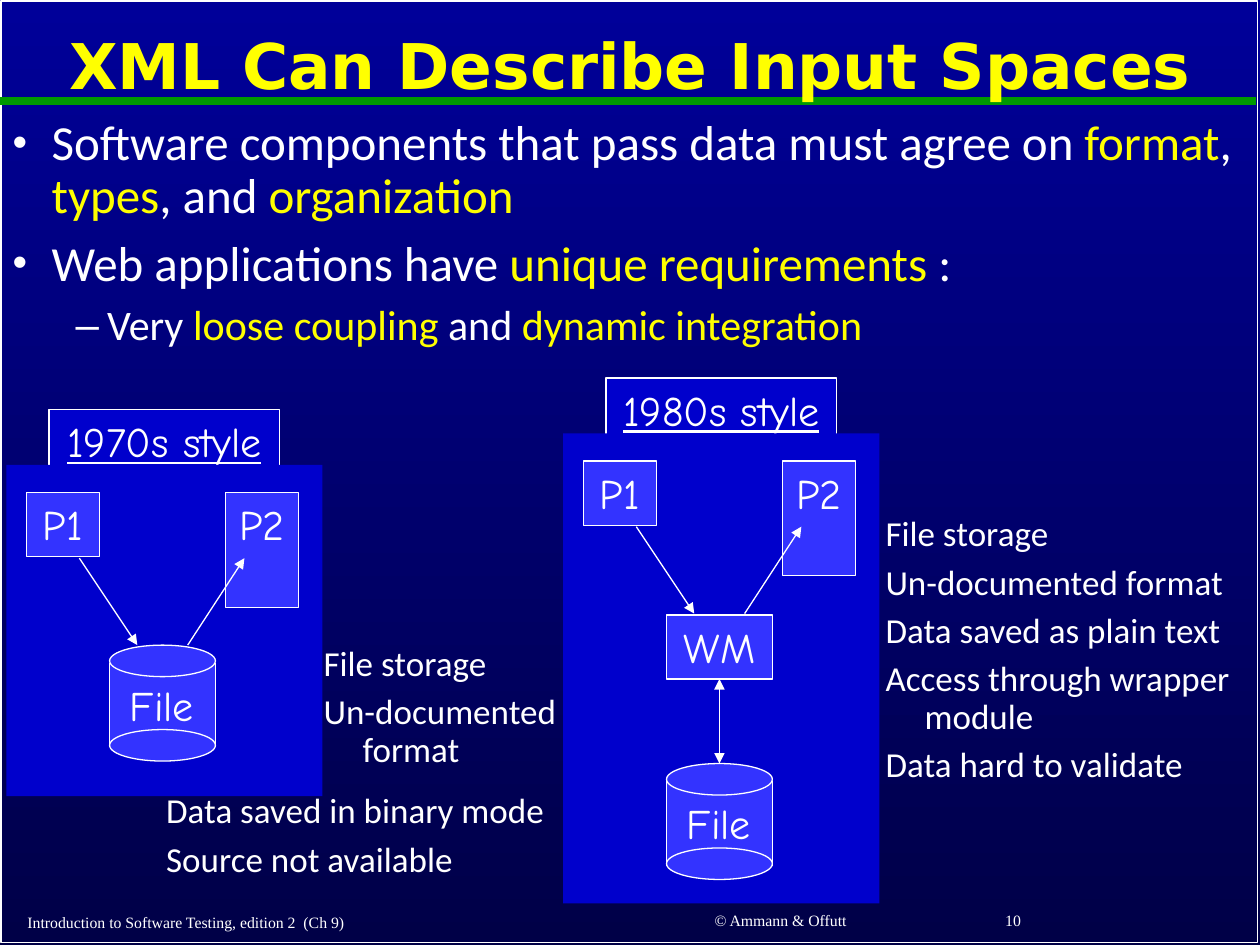
from dataclasses import dataclass

from lxml import etree
from pptx import Presentation
from pptx.dml.color import RGBColor
from pptx.enum.shapes import MSO_CONNECTOR, MSO_SHAPE
from pptx.enum.text import MSO_ANCHOR, MSO_AUTO_SIZE, PP_ALIGN
from pptx.oxml.ns import qn
from pptx.util import Pt

EMU_PER_PX = 9144
RECTANGLE, OVAL = MSO_SHAPE.RECTANGLE, MSO_SHAPE.OVAL
STRAIGHT = MSO_CONNECTOR.STRAIGHT
LEFT, CENTER = PP_ALIGN.LEFT, PP_ALIGN.CENTER
TOP, MIDDLE, BOTTOM = MSO_ANCHOR.TOP, MSO_ANCHOR.MIDDLE, MSO_ANCHOR.BOTTOM
NO_AUTOFIT = MSO_AUTO_SIZE.NONE
BOTTOM_SITE, TOP_SITE = 2, 0


@dataclass(frozen=True)
class Theme:
    sky: str = "000099"
    night: str = "000047"
    text: str = "FFFFFF"
    accent: str = "FFFF00"
    rule: str = "009900"
    panel: str = "0000CC"
    box: str = "3333FF"
    title_font: str = "DejaVu Sans"
    body_font: str = "Calibri"
    diagram_font: str = "Comic Neue"
    footer_font: str = "Times New Roman"
    title_size: int = 36
    body_sizes: tuple = (28, 24)
    diagram_size: int = 24
    note_size: int = 20
    footer_size: int = 9
    outline: float = 0.75
    frame: float = 1
    rule_width: float = 4.5


THEME = Theme()


def px(*lengths):
    return [length * EMU_PER_PX for length in lengths]


def place(shape, box):
    shape.left, shape.top, shape.width, shape.height = px(*box)


def format_run(run, font, size, color=THEME.text):
    run.font.name = font
    run.font.size = Pt(size)
    run.font.color.rgb = RGBColor.from_string(color)


def hang(paragraph, margin, indent, size, first):
    paragraph.line_spacing = 0.9
    paragraph.space_before = Pt(0 if first else size * 0.3)
    properties = paragraph._p.get_or_add_pPr()
    properties.set("marL", str(margin * EMU_PER_PX))
    properties.set("indent", str(-indent * EMU_PER_PX))
    return properties


def add_label(slide, box, text, font, size, align=LEFT, anchor=TOP):
    label = slide.shapes.add_textbox(*px(*box))
    write_label(label, text, font, size, align, anchor)


def write_label(shape, text, font, size, align=CENTER, anchor=TOP):
    frame = shape.text_frame
    frame.text = text
    frame.word_wrap = True
    frame.vertical_anchor = anchor
    paragraph = frame.paragraphs[0]
    paragraph.alignment = align
    format_run(paragraph.runs[0], font, size)


def add_block(slide, box, fill=None, outline=None, text=None, kind=RECTANGLE):
    shape = slide.shapes.add_shape(kind, *px(*box))
    shape.shadow.inherit = False
    if fill:
        shape.fill.solid()
        shape.fill.fore_color.rgb = RGBColor.from_string(fill)
    else:
        shape.fill.background()
    if outline:
        shape.line.color.rgb = RGBColor.from_string(THEME.text)
        shape.line.width = Pt(outline)
    else:
        shape.line.fill.background()
    if text:
        write_label(shape, text, THEME.diagram_font, THEME.diagram_size)
    return shape


def add_line(slide, start, end, color=THEME.text, width=THEME.outline, heads=()):
    line = slide.shapes.add_connector(STRAIGHT, *px(*start, *end))
    line.line.color.rgb = RGBColor.from_string(color)
    line.line.width = Pt(width)
    for head in heads:
        etree.SubElement(line.line._get_or_add_ln(), qn(f"a:{head}"), type="triangle")
    etree.SubElement(line._element.spPr, qn("a:effectLst"))
    return line


def add_notes_list(slide, box, items):
    frame = slide.shapes.add_textbox(*px(*box)).text_frame
    frame.word_wrap = True
    frame.text = "\n".join(items)
    for index, paragraph in enumerate(frame.paragraphs):
        hang(paragraph, 31, 31, THEME.note_size, index == 0)
        format_run(paragraph.runs[0], THEME.body_font, THEME.note_size)


def add_cylinder(slide, left, top):
    width, body_height, cap_height = 84, 67, 25
    middle = top + 14
    floor = middle + body_height
    add_block(slide, (left, middle, width, body_height), THEME.box)
    add_label(slide, (left + 3, top + 22, 77, 50), "File",
              THEME.diagram_font, THEME.diagram_size, CENTER)
    caps = [add_block(slide, (left, y, width, cap_height), THEME.box, THEME.outline, kind=OVAL)
            for y in (top, top + body_height)]
    for x in (left, left + width):
        add_line(slide, (x, middle), (x, floor))
    return caps[0]


def add_era(slide, left, top, height, heading, wrapped=False):
    title = add_block(slide, (left + 34, top - 44, 183, 91), THEME.panel, THEME.outline, heading)
    title.text_frame.paragraphs[0].runs[0].font.underline = True
    add_block(slide, (left, top, 251, height), THEME.panel)
    for x, box_height, name in ((16, 51, "P1"), (174, 91, "P2")):
        add_block(slide, (left + x, top + 22, 58, box_height), THEME.box, THEME.outline, name)
    store = add_cylinder(slide, left + 82, top + (262 if wrapped else 143))
    for start, end in (((58, 74), (104, 143)), ((144, 143), (189, 74))):
        add_line(slide, (left + start[0], top + start[1]),
                 (left + end[0], top + end[1]), heads=["tailEnd"])
    if wrapped:
        wrapper = add_block(slide, (left + 82, top + 144, 84, 51),
                            THEME.box, THEME.outline, "WM")
        link = add_line(slide, (0, 0), (0, 0), heads=["headEnd", "tailEnd"])
        link.begin_connect(wrapper, BOTTOM_SITE)
        link.end_connect(store, TOP_SITE)


def fill_title(title, text):
    place(title, (10, 11, 980, 88))
    write_label(title, text, THEME.title_font, THEME.title_size, anchor=MIDDLE)
    title.text_frame.auto_size = NO_AUTOFIT
    paragraph = title.text_frame.paragraphs[0]
    paragraph.line_spacing = 0.9
    paragraph.runs[0].font.bold = True
    paragraph.runs[0].font.color.rgb = RGBColor.from_string(THEME.accent)


def fill_body(body, items):
    place(body, (0, 89, 1000, 208))
    frame = body.text_frame
    frame.auto_size = NO_AUTOFIT
    for index, (level, marked_text) in enumerate(items):
        paragraph = frame.add_paragraph() if index else frame.paragraphs[0]
        paragraph.level = level
        size = THEME.body_sizes[level]
        margin, indent, bullet, scale = ((31, 31, "•", 85), (75, 25, "–", 100))[level]
        properties = hang(paragraph, margin, indent, size, index == 0)
        etree.SubElement(properties, qn("a:buSzPct"), val=str(scale * 1000))
        etree.SubElement(properties, qn("a:buChar"), char=bullet)
        for position, part in enumerate(marked_text.split("|")):
            run = paragraph.add_run()
            run.text = part
            format_run(run, THEME.body_font, size, THEME.accent if position % 2 else THEME.text)


def add_backdrop(slide):
    fill = slide.background.fill
    fill.gradient()
    fill.gradient_angle = 270
    for stop, color in zip(fill.gradient_stops, (THEME.sky, THEME.night)):
        stop.color.rgb = RGBColor.from_string(color)
    frame = add_block(slide, (1, 1, 997, 747), outline=THEME.frame)
    rule = add_line(slide, (0, 80), (997, 80), THEME.rule, THEME.rule_width)
    for shape in (rule, frame):
        shape.element.getparent().insert(2, shape.element)


def main():
    presentation = Presentation()
    presentation.slide_width, presentation.slide_height = px(1000, 750)
    slide = presentation.slides.add_slide(presentation.slide_layouts[1])
    add_backdrop(slide)
    fill_title(slide.shapes.title, "XML Can Describe Input Spaces")
    fill_body(slide.placeholders[1], [
        (0, "Software components that pass data must agree on |format|, |types|, and |organization"),
        (0, "Web applications have |unique requirements| :"),
        (1, "Very |loose coupling| and |dynamic integration"),
    ])
    add_era(slide, 5, 369, 263, "1970s style")
    add_notes_list(slide, (247, 508, 216, 117), ["File storage", "Un-documented format"])
    add_notes_list(slide, (122, 625, 325, 100),
                   ["Data saved in binary mode", "Source not available"])
    add_era(slide, 447, 344, 373, "1980s style", wrapped=True)
    add_notes_list(slide, (693, 405, 304, 250), [
        "File storage", "Un-documented format", "Data saved as plain text",
        "Access through wrapper module", "Data hard to validate"])
    for box, text, align in (
            ((12, 713, 427, 31), "Introduction to Software Testing, edition 2  (Ch 9)", LEFT),
            ((461, 715, 317, 28), "© Ammann & Offutt", CENTER),
            ((788, 714, 197, 29), "10", LEFT)):
        add_label(slide, box, text, THEME.footer_font, THEME.footer_size, align, BOTTOM)
    presentation.save("out.pptx")


if __name__ == "__main__":
    main()
